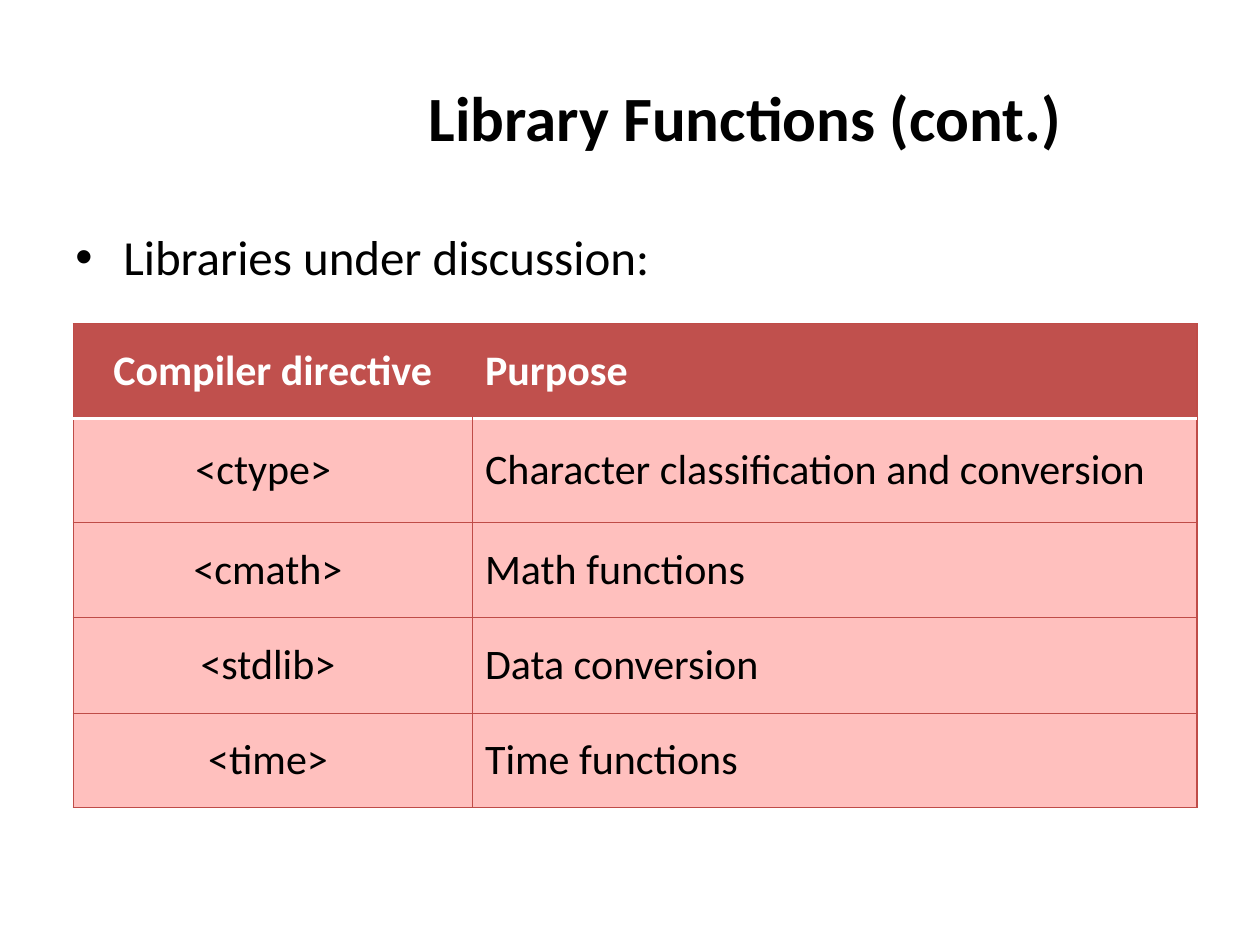
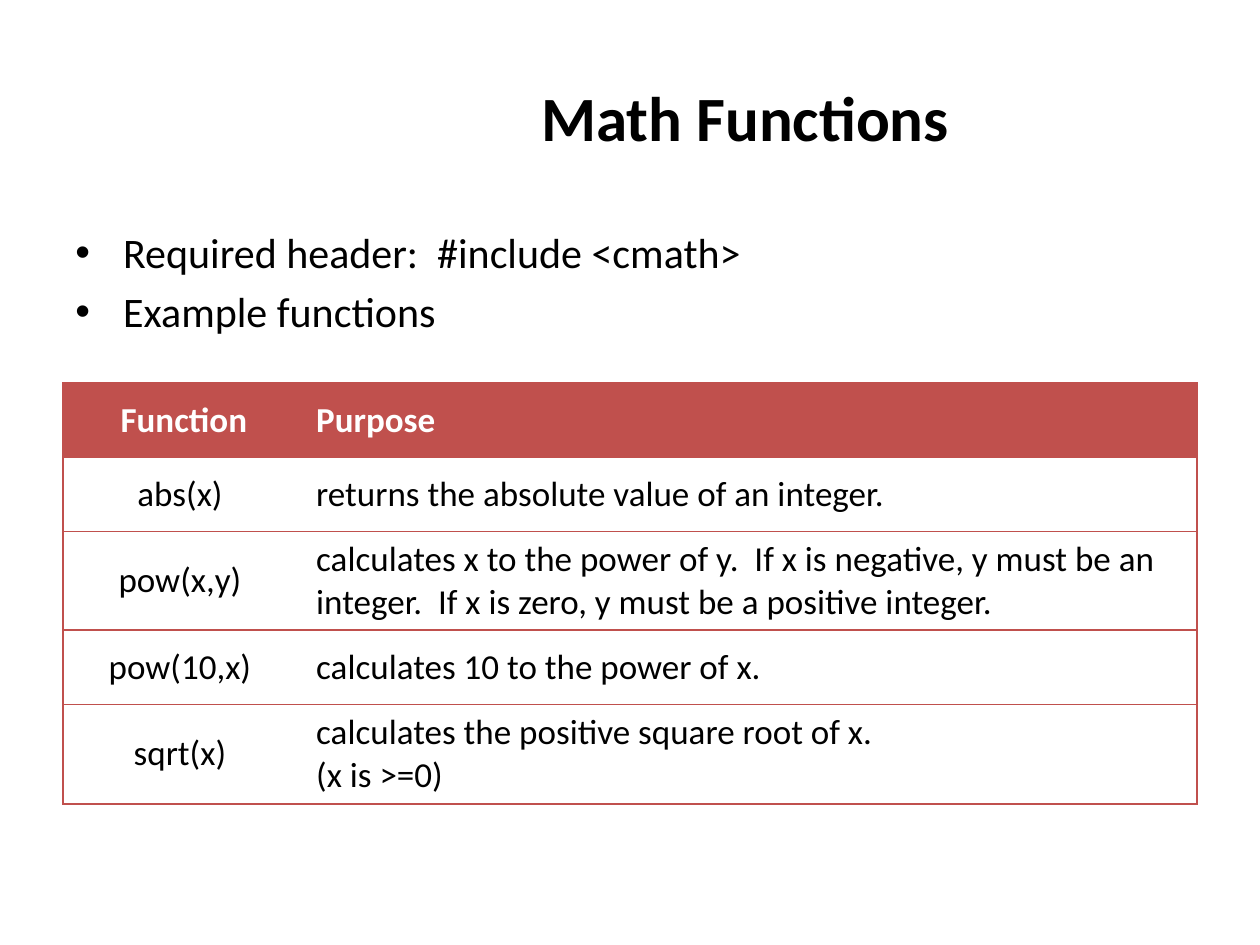
from dataclasses import dataclass

from lxml import etree
from pptx import Presentation
from pptx.dml.color import RGBColor
from pptx.enum.text import MSO_ANCHOR, PP_ALIGN
from pptx.oxml.ns import qn
from pptx.util import Inches, Pt

FONT = "Calibri"
BLACK = RGBColor(0x00, 0x00, 0x00)
WHITE = RGBColor(0xFF, 0xFF, 0xFF)
RED = RGBColor(0xC0, 0x50, 0x4D)
LINE_RED = RGBColor(0xBF, 0x4C, 0x48)
PINK = RGBColor(0xFF, 0xC0, 0xBE)

TITLE_BOX = (2.33, 0.3, 7.17, 1.25)
BULLET_INDENT = Inches(0.38)


@dataclass
class TableStyle:
    size: int
    body_fill: RGBColor
    line: tuple
    header_line: tuple
    column_line: tuple | None
    margins: tuple


LIBRARY_STYLE = TableStyle(24, PINK, (LINE_RED, 0.75), (WHITE, 2),
                           (LINE_RED, 0.75), (0.1, 0.05))
MATH_STYLE = TableStyle(20, WHITE, (RED, 1), (RED, 1), None, (0.09, 0.04))


def style_font(paragraph, size, color=BLACK, bold=False):
    for run in paragraph.runs:
        font = run.font
        font.name, font.size, font.bold = FONT, Pt(size), bold
        font.color.rgb = color


def add_text_frame(slide, box):
    text_frame = slide.shapes.add_textbox(*map(Inches, box)).text_frame
    text_frame.word_wrap = True
    return text_frame


def add_title(slide, text):
    text_frame = add_text_frame(slide, TITLE_BOX)
    text_frame.vertical_anchor = MSO_ANCHOR.MIDDLE
    text_frame.text = text
    paragraph = text_frame.paragraphs[0]
    paragraph.alignment = PP_ALIGN.CENTER
    style_font(paragraph, 36, bold=True)


def add_bullets(slide, box, lines, size):
    text_frame = add_text_frame(slide, box)
    text_frame.text = "\n".join(lines)
    for index, paragraph in enumerate(text_frame.paragraphs):
        properties = paragraph._p.get_or_add_pPr()
        properties.set("marL", str(BULLET_INDENT))
        properties.set("indent", str(-BULLET_INDENT))
        etree.SubElement(properties, qn("a:buFont"), typeface="Arial")
        etree.SubElement(properties, qn("a:buChar"), char="•")
        if index:
            paragraph.space_before = Pt(size * 0.2)
        style_font(paragraph, size)


def set_border(cell, side, line):
    """Draw one side (L, R, T or B) as (colour, points), or clear it for None."""
    border = etree.SubElement(cell._tc.get_or_add_tcPr(), qn(f"a:ln{side}"))
    if line is None:
        etree.SubElement(border, qn("a:noFill"))
        return
    color, width = line
    border.set("w", str(Pt(width)))
    fill = etree.SubElement(border, qn("a:solidFill"))
    etree.SubElement(fill, qn("a:srgbClr"), val=str(color))


def style_cell(cell, row, column, style):
    header = row == 0
    column_line = None if header else style.column_line
    set_border(cell, "L", style.line if column == 0 else column_line)
    set_border(cell, "R", column_line if column == 0 else style.line)
    set_border(cell, "T", style.header_line if row == 1 else style.line)
    set_border(cell, "B", style.header_line if header else style.line)
    cell.fill.solid()
    cell.fill.fore_color.rgb = RED if header else style.body_fill
    cell.vertical_anchor = MSO_ANCHOR.MIDDLE
    across, down = map(Inches, style.margins)
    cell.margin_left = cell.margin_right = across
    cell.margin_top = cell.margin_bottom = down
    for paragraph in cell.text_frame.paragraphs:
        paragraph.alignment = PP_ALIGN.LEFT if column else PP_ALIGN.CENTER
        style_font(paragraph, style.size, WHITE if header else BLACK, header)


def add_purpose_table(slide, left, top, widths, heights, rows, style):
    frame = slide.shapes.add_table(
        len(rows), len(widths), Inches(left), Inches(top),
        Inches(sum(widths)), Inches(sum(heights)))
    table = frame.table
    table.first_row = table.horz_banding = False
    for column, width in zip(table.columns, widths):
        column.width = Inches(width)
    for row, height in zip(table.rows, heights):
        row.height = Inches(height)
    for row, texts in enumerate(rows):
        for column, text in enumerate(texts):
            cell = table.cell(row, column)
            cell.text = text
            style_cell(cell, row, column, style)


def add_slide(presentation, title):
    slide = presentation.slides.add_slide(presentation.slide_layouts[6])
    add_title(slide, title)
    return slide


def build_libraries_slide(presentation):
    slide = add_slide(presentation, "Library Functions (cont.)")
    add_bullets(slide, (0.5, 1.75, 8.09, 0.82), ["Libraries under discussion:"], 28)
    rows = [
        ("Compiler directive", "Purpose"),
        ("<ctype>  ", "Character classification and conversion"),
        ("<cmath> ", "Math functions"),
        ("<stdlib> ", "Data conversion"),
        ("<time> ", "Time functions"),
    ]
    add_purpose_table(slide, 0.58, 2.57, (3.17, 5.75),
                      (0.75, 0.83, 0.75, 0.76, 0.75), rows, LIBRARY_STYLE)


def build_math_slide(presentation):
    slide = add_slide(presentation, "Math Functions")
    add_bullets(slide, (0.5, 1.75, 9, 4.95),
                ["Required header:  #include <cmath>", "Example functions"], 24)
    rows = [
        ("Function", "Purpose"),
        ("abs(x) ", "returns the absolute value of an integer."),
        ("pow(x,y) ", "calculates x to the power of y.  If x is negative, y must be an "
                      "integer.  If x is zero, y must be a positive integer."),
        ("pow(10,x) ", "calculates 10 to the power of x."),
        ("sqrt(x) ", "calculates the positive square root of x.\v(x is >=0)"),
    ]
    add_purpose_table(slide, 0.5, 3.04, (1.92, 7.08),
                      (0.59, 0.59, 0.78, 0.59, 0.79), rows, MATH_STYLE)


def main():
    presentation = Presentation()
    presentation.slide_width = Inches(10)
    presentation.slide_height = Inches(7.5)
    build_libraries_slide(presentation)
    build_math_slide(presentation)
    presentation.save("out.pptx")


if __name__ == "__main__":
    main()
